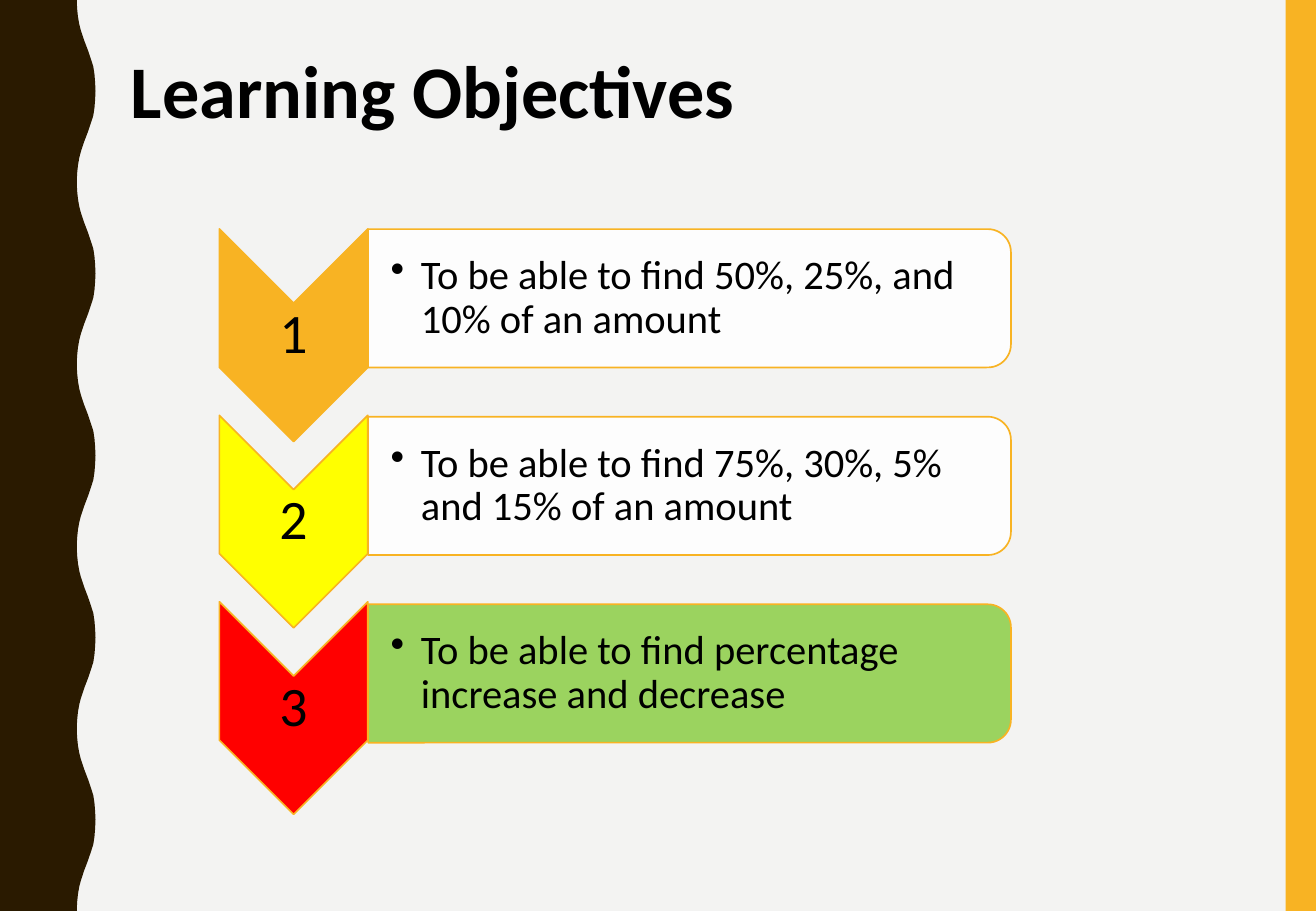
import pptx
import pptx.dml.color
import pptx.enum.shapes
import pptx.enum.text
import pptx.oxml
import pptx.oxml.ns
import pptx.util

Pt = pptx.util.Pt
SHAPES = pptx.enum.shapes.MSO_SHAPE
ANCHOR = pptx.enum.text.MSO_ANCHOR
ALIGN = pptx.enum.text.PP_ALIGN

COLOURS = {
    "background": "F3F3F2", "brown": "2A1A00", "amber": "F8B323", "yellow": "FFFF00",
    "red": "FF0000", "white": "FFFFFF", "green": "92D050", "black": "000000",
}
WIDTH, HEIGHT = 780, 540
WAVE_COUNT = 5
WAVE_PERIOD = HEIGHT / WAVE_COUNT
HALF_WAVE = [
    (45.5, 0), (45.7, 5), (46.2, 10), (47, 14.5), (47.9, 18), (49.9, 24),
    (52.2, 30), (54.2, 36), (55.3, 39.5), (56, 44), (56.4, 49), (56.6, 54),
]
OBJECTIVES = [
    ("amber", "white", "To be able to find 50%, 25%, and 10% of an amount"),
    ("yellow", "white", "To be able to find 75%, 30%, 5% and 15% of an amount"),
    ("red", "green", "To be able to find percentage increase and decrease"),
]
CHEVRON_STEP, BOX_STEP = 110.5, 111.2


class SlideBuilder:
    def __init__(self, presentation):
        self.slide = presentation.slides.add_slide(presentation.slide_layouts[6])
        self.font = {"name": "Calibri", "bold": False}
        fill = self.slide.background.fill
        fill.solid()
        fill.fore_color.rgb = self.colour("background")

    def colour(self, name):
        return pptx.dml.color.RGBColor.from_string(COLOURS[name])

    def paint(self, shape, fill, line=None, opacity=100):
        shape.shadow.inherit = False
        shape.fill.solid()
        shape.fill.fore_color.rgb = self.colour(fill)
        if opacity < 100:
            namespace = pptx.oxml.ns.nsdecls("a")
            alpha = pptx.oxml.parse_xml(f'<a:alpha {namespace} val="{opacity * 1000}"/>')
            shape.element.spPr.find(".//" + pptx.oxml.ns.qn("a:srgbClr")).append(alpha)
        if line:
            shape.line.color.rgb = self.colour(line)
            shape.line.width = Pt(1)
        else:
            shape.line.fill.background()

    def outline(self, points, fill):
        builder = self.slide.shapes.build_freeform(*map(Pt, points[0]), scale=1.0)
        builder.add_line_segments([(Pt(x), Pt(y)) for x, y in points[1:]], close=True)
        self.paint(builder.convert_to_shape(), fill)

    def preset(self, kind, centre, size, fill, line=None, rotation=0, opacity=100):
        left, top = (middle - length / 2 for middle, length in zip(centre, size))
        shape = self.slide.shapes.add_shape(kind, Pt(left), Pt(top), *map(Pt, size))
        shape.rotation = rotation
        self.paint(shape, fill, line, opacity)

    def text(self, words, box, size, frame_format, paragraph_format, bold=False, bullet=False):
        frame = self.slide.shapes.add_textbox(*map(Pt, box)).text_frame
        for name, value in {"word_wrap": True, **frame_format}.items():
            setattr(frame, name, value)
        paragraph = frame.paragraphs[0]
        for name, value in paragraph_format.items():
            setattr(paragraph, name, value)
        if bullet:
            properties = paragraph._p.get_or_add_pPr()
            properties.set("marL", str(Pt(18)))
            properties.set("indent", str(-Pt(18)))
            namespace = pptx.oxml.ns.nsdecls("a")
            properties.append(pptx.oxml.parse_xml(f'<a:buChar {namespace} char="•"/>'))
        run = paragraph.add_run()
        run.text = words
        for name, value in {**self.font, "size": Pt(size), "bold": bold}.items():
            setattr(run.font, name, value)
        run.font.color.rgb = self.colour("black")


def wave_points():
    wave = HALF_WAVE + [(x, WAVE_PERIOD - y) for x, y in HALF_WAVE[-2:0:-1]]
    edge = [(x, y + index * WAVE_PERIOD) for index in range(WAVE_COUNT) for x, y in wave]
    return [(0, 0), *edge, (HALF_WAVE[0][0], HEIGHT), (0, HEIGHT)]


def main():
    presentation = pptx.Presentation()
    presentation.slide_width, presentation.slide_height = Pt(WIDTH), Pt(HEIGHT)
    builder = SlideBuilder(presentation)
    builder.outline(wave_points(), "brown")
    builder.preset(SHAPES.RECTANGLE, (WIDTH - 9, HEIGHT / 2), (18, HEIGHT), "amber")

    tight = {f"margin_{side}": Pt(1.5) for side in ("left", "top", "right", "bottom")}
    tight["vertical_anchor"] = ANCHOR.MIDDLE
    indented = {**tight, "margin_left": Pt(13.5)}
    spacing = {"line_spacing": 0.9}
    for index, (chevron_fill, box_fill, words) in enumerate(OBJECTIVES):
        chevron_shift, box_shift = index * CHEVRON_STEP, index * BOX_STEP
        builder.preset(SHAPES.CHEVRON, (174, 198.7 + chevron_shift), (126, 88),
                       chevron_fill, "amber", 90)
        builder.text(str(index + 1), (130, 180 + chevron_shift, 88, 37.5), 33,
                     tight, {**spacing, "alignment": ALIGN.CENTER})
        builder.preset(SHAPES.ROUND_2_SAME_RECTANGLE, (408.7, 176.8 + box_shift), (82, 381),
                       box_fill, "amber", 90, opacity=90)
        builder.text(words, (218, 139.7 + box_shift, 377, 74), 24,
                     indented, spacing, bullet=True)

    builder.text("Learning Objectives", (70.5, 23, 581, 60.5), 44, {}, {}, bold=True)
    presentation.save("out.pptx")


if __name__ == "__main__":
    main()
